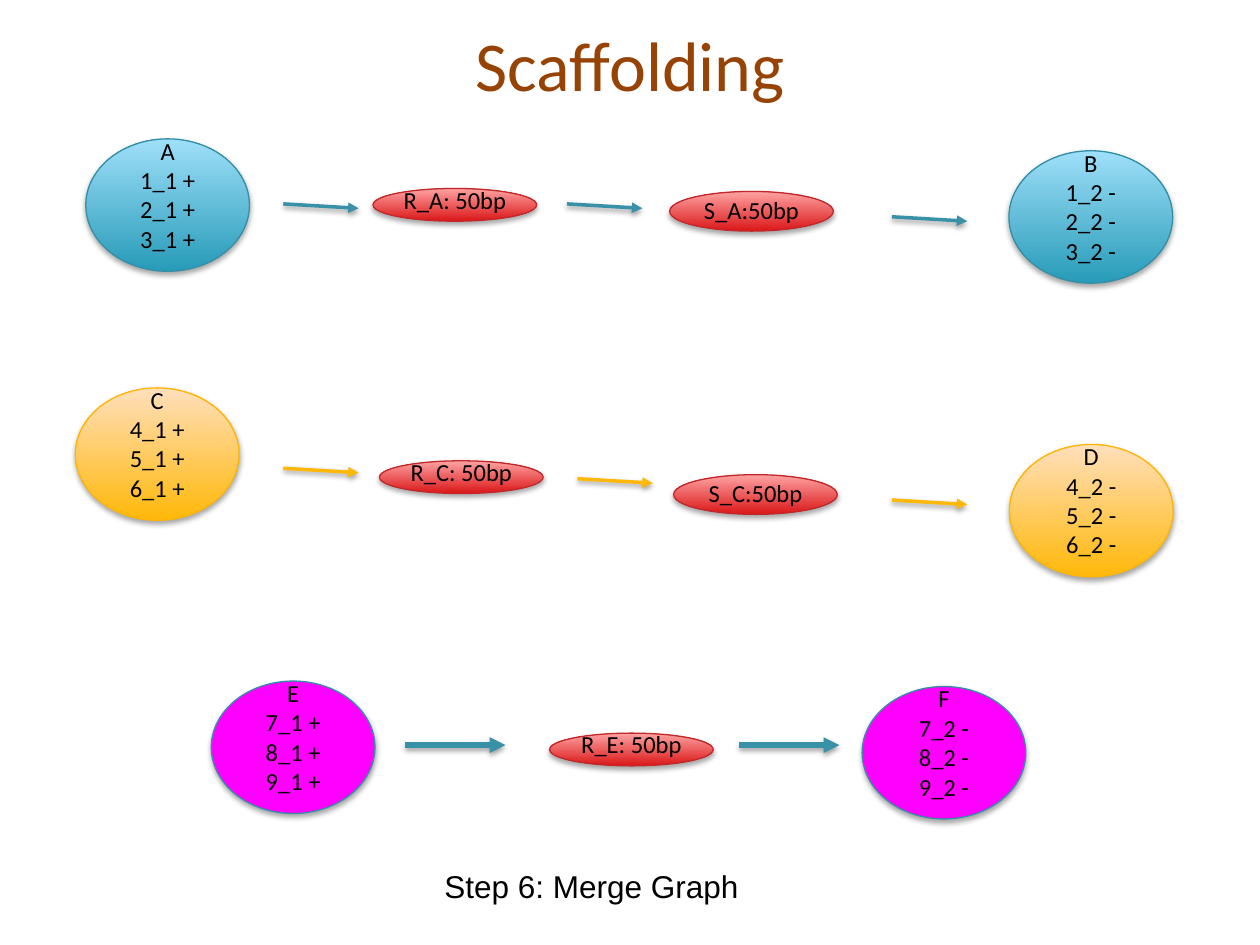
from lxml.etree import SubElement
from pptx import Presentation
from pptx.dml.color import RGBColor
from pptx.enum.shapes import MSO_CONNECTOR as Connector, MSO_SHAPE as Shape
from pptx.enum.text import MSO_ANCHOR as Anchor, PP_ALIGN as Align
from pptx.oxml.ns import qn
from pptx.util import Cm, Pt

BLUE = ("279BB8", "9FDFF9")
ORANGE = ("FFB809", "FFDFBC")
RED = ("DA1718", "FFA3A3")
MAGENTA = ("FF00FF",)
TEAL_LINE, ORANGE_LINE, RED_LINE = "348FA6", "FEB604", "C22829"
TEAL_ARROW, ORANGE_ARROW = "3891A7", "FEB80A"


def color(value):
    return RGBColor.from_string(value)


class GraphSlide:
    font = "Calibri"
    label_size = 14
    ellipse_width = 3.3
    label_width = 4.26

    def __init__(self, presentation):
        self.slide = presentation.slides.add_slide(presentation.slide_layouts[6])

    def text(self, lines, left, top, width, height, size=label_size, font=font,
             ink="000000", align=Align.CENTER, anchor=Anchor.TOP, wrap=True):
        box = self.slide.shapes.add_textbox(Cm(left), Cm(top), Cm(width), Cm(height))
        frame = box.text_frame
        frame.word_wrap = wrap
        frame.vertical_anchor = anchor
        for index, line in enumerate(lines):
            paragraph = frame.add_paragraph() if index else frame.paragraphs[0]
            paragraph.alignment = align
            run = paragraph.add_run()
            run.text = line
            run.font.name = font
            run.font.size = Pt(size)
            run.font.color.rgb = color(ink)

    def shadow(self, properties, distance, opacity):
        effects = SubElement(properties, qn("a:effectLst"))
        outer = SubElement(effects, qn("a:outerShdw"), blurRad=str(Pt(3.1)),
                           dist=str(Pt(distance)), dir="5400000", rotWithShape="0")
        black = SubElement(outer, qn("a:srgbClr"), val="000000")
        SubElement(black, qn("a:alpha"), val=str(opacity * 1000))

    def ellipse(self, lines, left, top, height, fill, outline, lift):
        shape = self.slide.shapes.add_shape(
            Shape.OVAL, Cm(left), Cm(top), Cm(self.ellipse_width), Cm(height))
        if len(fill) == 1:
            shape.fill.solid()
            shape.fill.fore_color.rgb = color(fill[0])
        else:
            shape.fill.gradient()
            shape.fill.gradient_angle = 90
            for position, (stop, value) in enumerate(zip(shape.fill.gradient_stops, fill)):
                stop.position = position
                stop.color.rgb = color(value)
        shape.line.color.rgb = color(outline)
        shape.line.width = Pt(0.75)
        self.shadow(shape.element.spPr, 1.8, 35)
        margin = (self.label_width - self.ellipse_width) / 2
        label_height = 0.86 if len(lines) == 1 else 2.64
        self.text(lines, left - margin, top - lift, self.label_width, label_height)

    def contig(self, name, first, end, strand, left, top, fill, outline):
        members = [f"{number}_{end} {strand}" for number in range(first, first + 3)]
        self.ellipse([name, *members], left, top, 2.67, fill, outline, 0.19)

    def repeat(self, label, left, top):
        self.ellipse([label], left, top, 0.66, RED, RED_LINE, 0.2)

    def spacer(self, label, left, top):
        self.ellipse([label], left, top, 0.8, RED, RED_LINE, 0.05)

    def arrow(self, left, top, ink, length=1.52, drop=0.09, weight=2):
        connector = self.slide.shapes.add_connector(
            Connector.STRAIGHT, Cm(left), Cm(top), Cm(left + length), Cm(top + drop))
        connector.line.color.rgb = color(ink)
        connector.line.width = Pt(weight)
        SubElement(connector.line._get_or_add_ln(), qn("a:tailEnd"), type="triangle")
        self.shadow(connector._element.spPr, 1.6, 38)


def main():
    presentation = Presentation()
    presentation.slide_width, presentation.slide_height = Cm(25.4), Cm(19.05)
    graph = GraphSlide(presentation)

    graph.text(["Scaffolding"], 1.27, 0.43, 22.86, 1.7, size=40,
               ink="964305", anchor=Anchor.MIDDLE)

    for contig in (
        ("A", 1, 1, "+", 1.73, 2.8, BLUE, TEAL_LINE),
        ("B", 1, 2, "-", 20.34, 3.04, BLUE, TEAL_LINE),
        ("C", 4, 1, "+", 1.52, 7.82, ORANGE, ORANGE_LINE),
        ("D", 4, 2, "-", 20.35, 8.96, ORANGE, ORANGE_LINE),
        ("E", 7, 1, "+", 4.26, 13.73, MAGENTA, TEAL_LINE),
        ("F", 7, 2, "-", 17.38, 13.84, MAGENTA, TEAL_LINE),
    ):
        graph.contig(*contig)

    graph.repeat("R_A: 50bp", 7.52, 3.8)
    graph.repeat("R_C: 50bp", 7.65, 9.29)
    graph.repeat("R_E: 50bp", 11.08, 14.78)
    graph.spacer("S_A:50bp", 13.5, 3.86)
    graph.spacer("S_C:50bp", 13.58, 9.57)

    for left, top in ((5.71, 4.11), (11.43, 4.11), (17.98, 4.37)):
        graph.arrow(left, top, TEAL_ARROW)
    for left, top in ((5.71, 9.44), (11.64, 9.65), (17.98, 10.08)):
        graph.arrow(left, top, ORANGE_ARROW)
    for left in (8.17, 14.9):
        graph.arrow(left, 15.02, TEAL_ARROW, length=2.02, drop=0, weight=3)

    graph.text(["Step 6: Merge Graph"], 8.71, 17.35, 6.5, 1.02, size=18,
               font="Arial", align=Align.LEFT, wrap=False)
    presentation.save("out.pptx")


if __name__ == "__main__":
    main()
